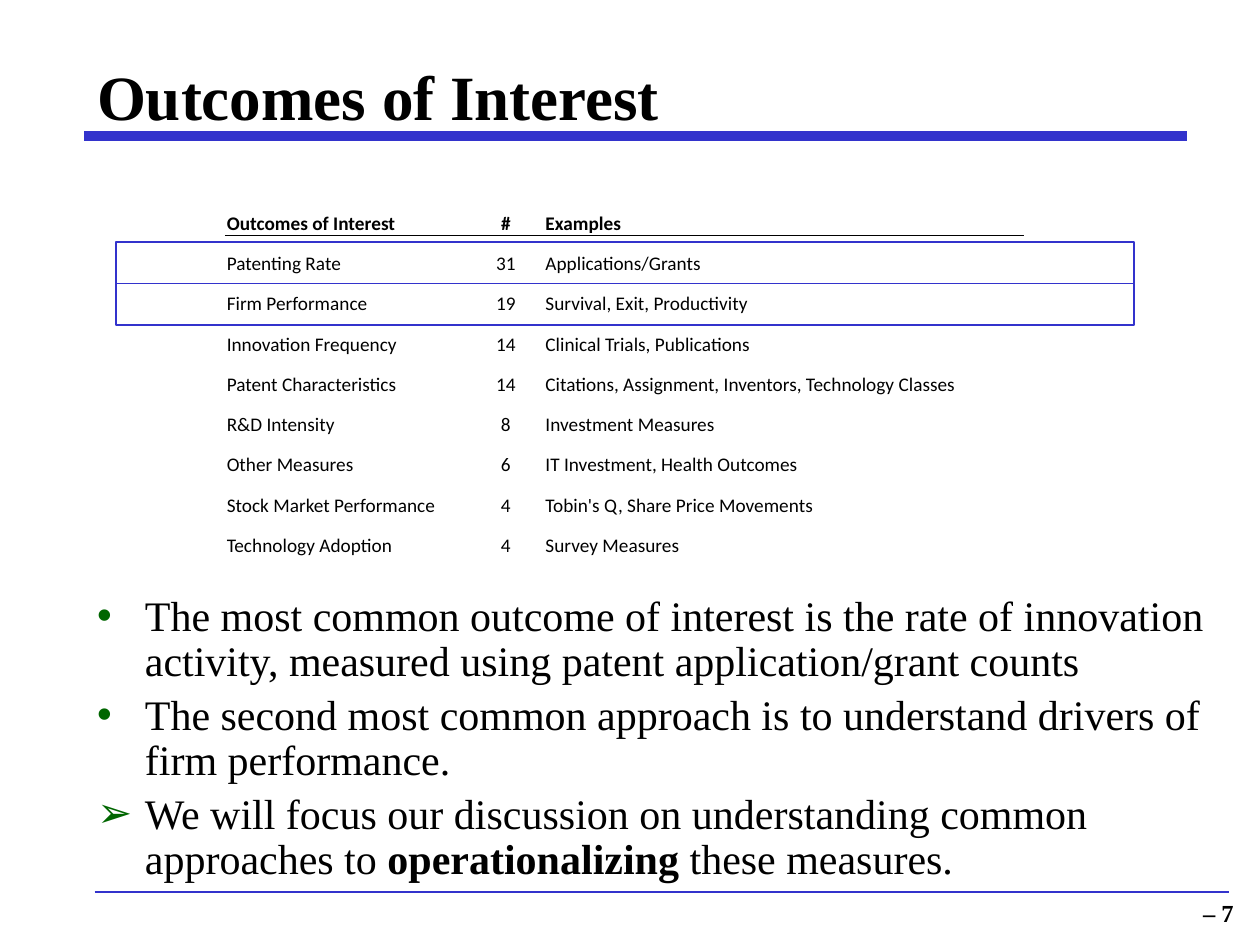
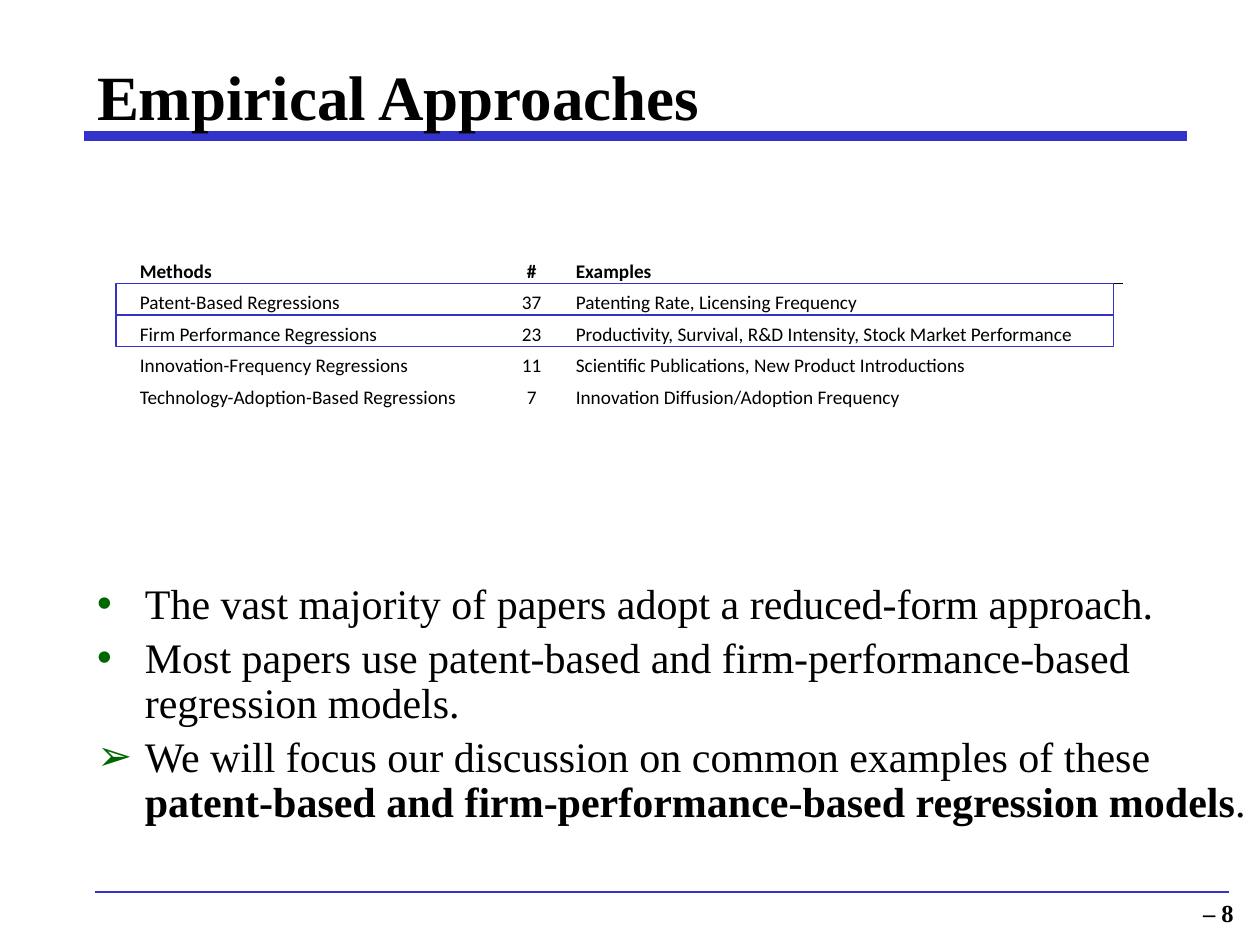
from lxml import etree
from pptx import Presentation
from pptx.dml.color import RGBColor
from pptx.enum.shapes import MSO_CONNECTOR, MSO_SHAPE
from pptx.enum.text import MSO_ANCHOR as Anchor, MSO_AUTO_SIZE as AutoSize, PP_ALIGN as Align
from pptx.oxml import parse_xml
from pptx.oxml.ns import nsdecls, qn
from pptx.util import Inches, Pt

COLORS = {"text": "000000", "blue": "3333CC", "bullet": "006600", "cell": "FFFFFF"}
SERIF, SANS = "Times New Roman", "Calibri"
# Start x, end x, y and line width
RULES = [(0.67, 9.42, 1.08, 6), (0.75, 9.75, 7.08, 0.75)]

# Highlights are left, top, width and height of the first of two stacked boxes.
# Bullets hold the mark and the plain, bold and plain parts of the text.
SLIDES = [
    {
        "title": "Outcomes of Interest",
        "page": "– 7",
        "table_at": (1.08, 1.23),
        "columns": [0.71, 1.92, 0.61, 3.81, 0.71],
        "row_height": 0.32,
        "row_count": 10,
        "rows": [
            ("Outcomes of Interest", "#", "Examples"),
            ("Patenting Rate", "31", "Applications/Grants"),
            ("Firm Performance", "19", "Survival, Exit, Productivity"),
            ("Innovation Frequency", "14", "Clinical Trials, Publications"),
            ("Patent Characteristics", "14", "Citations, Assignment, Inventors, Technology Classes"),
            ("R&D Intensity", "8", "Investment Measures"),
            ("Other Measures", "6", "IT Investment, Health Outcomes"),
            ("Stock Market Performance", "4", "Tobin's Q, Share Price Movements"),
            ("Technology Adoption", "4", "Survey Measures"),
        ],
        "highlight": (0.92, 1.92, 8.08, 0.33),
        "body_top": 4.67,
        "bullets": [
            ("•", ["The most common outcome of interest is the rate of innovation activity, "
                   "measured using patent application/grant counts"]),
            ("•", ["The second most common approach is to understand drivers of firm performance."]),
            ("➢", ["We will focus our discussion on understanding common approaches to ",
                   "operationalizing", " these measures."]),
        ],
    },
    {
        "title": "Empirical Approaches",
        "page": "– 8",
        "table_at": (0.42, 1.75),
        "columns": [0.68, 2.78, 0.68, 4.36, 0.68],
        "row_height": 0.25,
        "row_count": 7,
        "rows": [
            ("Methods", "#", "Examples"),
            ("Patent-Based Regressions", "37", "Patenting Rate, Licensing Frequency"),
            ("Firm Performance Regressions", "23",
             "Productivity, Survival, R&D Intensity, Stock Market Performance"),
            ("Innovation-Frequency Regressions", "11",
             "Scientific Publications, New Product Introductions"),
            ("Technology-Adoption-Based Regressions", "7", "Innovation Diffusion/Adoption Frequency"),
        ],
        "highlight": (0.92, 2.25, 7.92, 0.25),
        "body_top": 4.58,
        "bullets": [
            ("•", ["The vast majority of papers adopt a reduced-form approach."]),
            ("•", ["Most papers use patent-based and firm-performance-based regression models."]),
            ("➢", ["We will focus our discussion on common examples of these ",
                   "patent-based and firm-performance-based regression models", "."]),
        ],
    },
]


def format_run(run, name, size, bold=False):
    run.font.name = name
    run.font.size = Pt(size)
    run.font.bold = bold
    run.font.color.rgb = RGBColor.from_string(COLORS["text"])


def place(shape, left, top, width, height):
    shape.left, shape.top = Inches(left), Inches(top)
    shape.width, shape.height = Inches(width), Inches(height)


presentation = Presentation()
presentation.slide_width, presentation.slide_height = Inches(10), Inches(7.5)

for content in SLIDES:
    slide = presentation.slides.add_slide(presentation.slide_layouts[1])
    shapes = slide.shapes

    # Rules under the title and above the footer, behind everything else
    for start, end, y, width in RULES:
        rule = shapes.add_connector(MSO_CONNECTOR.STRAIGHT, Inches(start), Inches(y), Inches(end), Inches(y))
        rule.line.color.rgb = RGBColor.from_string(COLORS["blue"])
        rule.line.width = Pt(width)
        etree.SubElement(rule._element.spPr, qn("a:effectLst"))
        shapes._spTree.insert(2, rule._element)

    # Page number
    page_box = shapes.add_textbox(Inches(9.32), Inches(7.08), Inches(0.57), Inches(0.33))
    page_frame = page_box.text_frame
    page_frame.text = content["page"]
    page_frame.word_wrap = False
    page_frame.auto_size = AutoSize.SHAPE_TO_FIT_TEXT
    page_frame.paragraphs[0].alignment = Align.RIGHT
    format_run(page_frame.paragraphs[0].runs[0], SERIF, 14, True)

    # Title
    place(shapes.title, 0.67, 0.42, 8.75, 0.67)
    title_frame = shapes.title.text_frame
    title_frame.text = content["title"]
    title_frame.auto_size = AutoSize.NONE
    title_frame.vertical_anchor = Anchor.MIDDLE
    title_frame.paragraphs[0].alignment = Align.LEFT
    format_run(title_frame.paragraphs[0].runs[0], SERIF, 36, True)

    # Bulleted list
    body = slide.placeholders[1]
    place(body, 0.67, content["body_top"], 9.33, 2.33)
    body_frame = body.text_frame
    body_frame.auto_size = AutoSize.NONE
    for index, (mark, parts) in enumerate(content["bullets"]):
        paragraph = body_frame.paragraphs[0] if index == 0 else body_frame.add_paragraph()
        properties = paragraph._p.get_or_add_pPr()
        properties.set("marL", str(Inches(0.38)))
        properties.set("indent", str(-Inches(0.38)))
        bullet_color = etree.SubElement(properties, qn("a:buClr"))
        etree.SubElement(bullet_color, qn("a:srgbClr"), val=COLORS["bullet"])
        etree.SubElement(properties, qn("a:buChar"), char=mark)
        paragraph.line_spacing = 0.9
        paragraph.space_before = Pt(4.8 if index else 0)
        for part_index, part in enumerate(parts):
            run = paragraph.add_run()
            run.text = part
            format_run(run, SERIF, 24, part_index == 1)

    # Table with an empty margin around the data
    left, top = content["table_at"]
    columns, row_height = content["columns"], content["row_height"]
    row_count = content["row_count"]
    table = shapes.add_table(row_count, len(columns), Inches(left), Inches(top),
                             Inches(sum(columns)), Inches(row_height * row_count)).table
    table.first_row = table.horz_banding = False
    for column, width in zip(table.columns, columns):
        column.width = Inches(width)
    for row in table.rows:
        row.height = Inches(row_height)
    for cell in table.iter_cells():
        cell.fill.solid()
        cell.fill.fore_color.rgb = RGBColor.from_string(COLORS["cell"])
        cell.margin_left = cell.margin_right = cell.margin_top = Inches(0.01)
        cell.margin_bottom = 0
        cell.vertical_anchor = Anchor.BOTTOM
        cell.text_frame.paragraphs[0]._p.get_or_add_endParaRPr().set("sz", "1100")
    for row_index, values in enumerate(content["rows"], start=1):
        for column_index, value in enumerate(values, start=1):
            cell = table.cell(row_index, column_index)
            cell.text_frame.text = value
            paragraph = cell.text_frame.paragraphs[0]
            paragraph.alignment = Align.CENTER if column_index == 2 else Align.LEFT
            format_run(paragraph.runs[0], SANS, 11, row_index == 1)
            # Line between the header and the first data row
            if row_index <= 2:
                side = "lnB" if row_index == 1 else "lnT"
                cell._tc.get_or_add_tcPr().insert(0, parse_xml(
                    f'<a:{side} {nsdecls("a")} w="{Pt(0.5)}"><a:solidFill>'
                    f'<a:srgbClr val="{COLORS["text"]}"/></a:solidFill></a:{side}>'))

    # Boxes around the two most common rows
    left, top, width, height = content["highlight"]
    for index in range(2):
        box = shapes.add_shape(MSO_SHAPE.RECTANGLE, Inches(left), Inches(top + index * height),
                               Inches(width), Inches(height))
        box.shadow.inherit = False
        box.fill.background()
        box.line.color.rgb = RGBColor.from_string(COLORS["blue"])
        box.line.width = Pt(0.75)

presentation.save("out.pptx")
